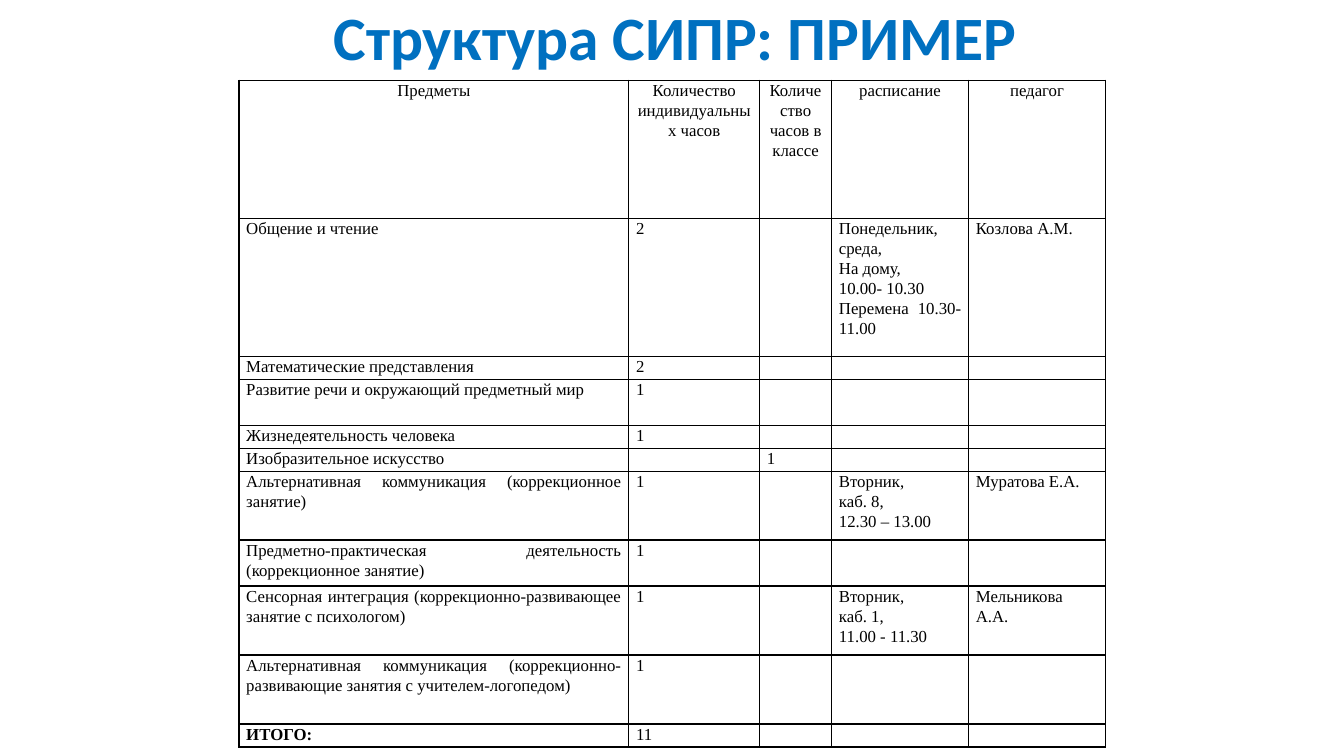
from lxml import etree
from pptx import Presentation
from pptx.dml.color import RGBColor
from pptx.enum.text import MSO_ANCHOR, MSO_AUTO_SIZE, PP_ALIGN
from pptx.oxml.ns import qn
from pptx.util import Pt

CENTER, JUSTIFY = PP_ALIGN.CENTER, PP_ALIGN.JUSTIFY
MIDDLE, TOP = MSO_ANCHOR.MIDDLE, MSO_ANCHOR.TOP
FIXED = MSO_AUTO_SIZE.NONE

COLORS = {"title": "0070C0", "ink": "000000"}
TITLE = "Структура СИПР: ПРИМЕР"
HEAD = ["Предметы", "Количество индивидуальных часов", "Количество часов в классе",
        "расписание", "педагог"]
ROWS = [
    (6, HEAD),
    (6, ["Общение и чтение", "2", "",
         "Понедельник, среда,\nНа дому,\n10.00- 10.30\nПеремена 10.30-11.00",
         "Козлова А.М."]),
    (1, ["Математические представления", "2", "", "", ""]),
    (2, ["Развитие речи и окружающий предметный мир", "1", "", "", ""]),
    (1, ["Жизнедеятельность человека", "1", "", "", ""]),
    (1, ["Изобразительное искусство", "", "1", "", ""]),
    (3, ["Альтернативная коммуникация (коррекционное занятие)", "1", "",
         "Вторник, \nкаб. 8, \n12.30 – 13.00", "Муратова Е.А."]),
    (2, ["Предметно-практическая деятельность (коррекционное занятие)", "1", "", "", ""]),
    (3, ["Сенсорная интеграция (коррекционно-развивающее занятие с психологом)", "1", "",
         "Вторник, \nкаб. 1, \n11.00 - 11.30", "Мельникова А.А."]),
    (3, ["Альтернативная коммуникация (коррекционно-развивающие занятия с учителем-логопедом)",
         "1", "", "", ""]),
    (1, ["ИТОГО:", "11", "", "", ""]),
]
WIDTHS = [278.5, 93.5, 51.4, 97.8, 97.8]
LINE = 16.43
LEFT, UP = 170.7, 57.3


def write(frame, text, font="Times New Roman", size=12, color="ink", bold=False,
          align=JUSTIFY, space=1.07):
    for i, line in enumerate(text.split("\n")):
        para = frame.add_paragraph() if i else frame.paragraphs[0]
        para.alignment = align
        para.line_spacing = space
        if not line:
            etree.SubElement(para._p, qn("a:endParaRPr"), sz=str(size * 100))
            continue
        run = para.add_run()
        run.text = line
        run.font.name = font
        run.font.size = Pt(size)
        run.font.bold = bold
        run.font.color.rgb = RGBColor.from_string(COLORS[color])


def border(cell):
    props = cell._tc.get_or_add_tcPr()
    for i, side in enumerate(("lnL", "lnR", "lnT", "lnB")):
        edge = etree.Element(qn("a:" + side), w=str(Pt(1)))
        fill = etree.SubElement(edge, qn("a:solidFill"))
        etree.SubElement(fill, qn("a:srgbClr"), val=COLORS["ink"])
        props.insert(i, edge)


def main():
    deck = Presentation()
    deck.slide_width, deck.slide_height = Pt(960), Pt(540)
    slide = deck.slides.add_slide(deck.slide_layouts[5])

    title = slide.shapes.title
    title.left, title.top, title.width, title.height = Pt(23.8), Pt(0), Pt(917.3), Pt(57.6)
    frame = title.text_frame
    frame.auto_size = FIXED
    frame.vertical_anchor = MIDDLE
    write(frame, TITLE, font="Calibri", size=44, color="title", bold=True,
          align=CENTER, space=0.9)

    total = LINE * sum(units for units, _ in ROWS)
    table = slide.shapes.add_table(len(ROWS), len(WIDTHS), Pt(LEFT), Pt(UP),
                                   Pt(sum(WIDTHS)), Pt(total)).table
    table.first_row = table.horz_banding = False
    for col, width in zip(table.columns, WIDTHS):
        col.width = Pt(width)
    for r, (units, texts) in enumerate(ROWS):
        table.rows[r].height = Pt(LINE * units)
        for c, text in enumerate(texts):
            cell = table.cell(r, c)
            cell.margin_left = cell.margin_right = Pt(5.2)
            cell.margin_top = cell.margin_bottom = 0
            cell.vertical_anchor = TOP
            cell.fill.background()
            border(cell)
            write(cell.text_frame, text, bold=text == "ИТОГО:",
                  align=JUSTIFY if r else CENTER)

    deck.save("out.pptx")


if __name__ == "__main__":
    main()
